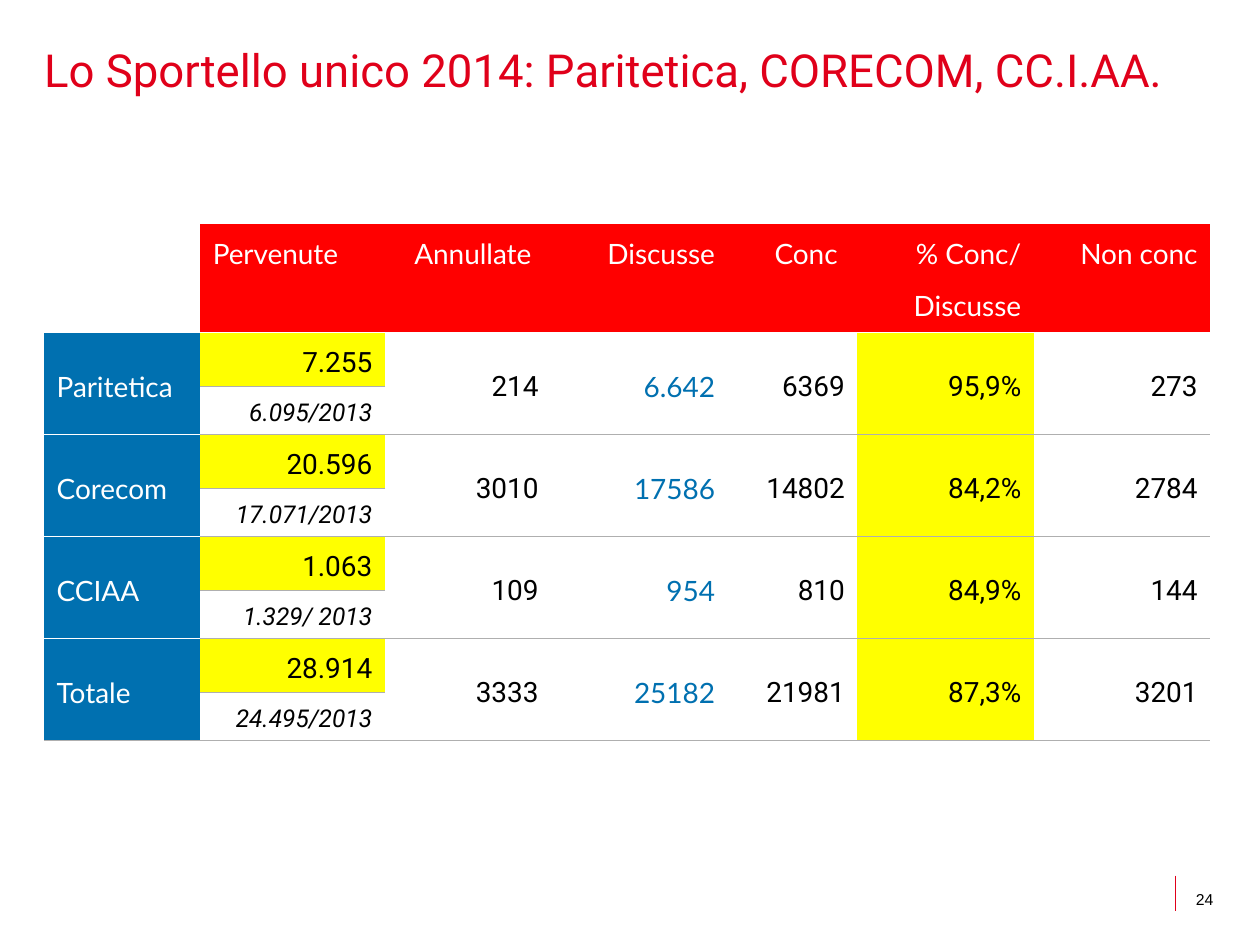
from dataclasses import dataclass

from lxml.etree import SubElement
from pptx import Presentation
from pptx.dml.color import RGBColor
from pptx.enum.text import MSO_ANCHOR, PP_ALIGN
from pptx.oxml.ns import qn
from pptx.util import Pt

RED, HEADER_RED, BLUE, YELLOW = "E0001A", "FF0000", "0070B0", "FFFF00"
WHITE, BLACK, GREY = "FFFFFF", "000000", "AFAFAF"


@dataclass(frozen=True)
class Style:
    font: str
    color: str
    size: float = 16
    italic: bool = False
    align: PP_ALIGN = PP_ALIGN.RIGHT
    fill: str | None = None
    anchor: MSO_ANCHOR = MSO_ANCHOR.MIDDLE


@dataclass(frozen=True)
class Channel:
    name: str
    received: str
    received_2013: str
    results: tuple[str, ...]


FIRST_HEADER = Style("Lato", WHITE, align=PP_ALIGN.LEFT, fill=HEADER_RED, anchor=MSO_ANCHOR.TOP)
HEADER = Style("Lato", WHITE, fill=HEADER_RED, anchor=MSO_ANCHOR.TOP)
LABEL = Style("Lato", WHITE, align=PP_ALIGN.LEFT, fill=BLUE)
NUMBER = Style("Roboto", BLACK)
MARKED = Style("Roboto", BLACK, fill=YELLOW)
DISCUSSED = Style("Lato", BLUE)
PREVIOUS = Style("Roboto", BLACK, size=14, italic=True)
RESULT_STYLES = (NUMBER, DISCUSSED, NUMBER, MARKED, NUMBER)

HEADERS = ("Pervenute", "Annullate ", "Discusse", "Conc ", "% Conc/\nDiscusse", "Non conc")
CHANNELS = (
    Channel("Paritetica", "7.255", " 6.095/2013", ("214", "6.642", "6369", "95,9%", "273")),
    Channel("Corecom", "20.596", "17.071/2013", ("3010", "17586", "14802", "84,2%", "2784")),
    Channel("CCIAA", "1.063", "1.329/ 2013", ("109", "954", "810", "84,9%", "144")),
    Channel("Totale", "28.914", "24.495/2013", ("3333", "25182", "21981", "87,3%", "3201")),
)
COLUMN_WIDTHS = (89.2, 105.6, 95, 100.8, 74.2, 100.8, 100.8)
ROW_HEIGHTS = (61.9,) + (30.9, 27.4) * len(CHANNELS)


def rgb(color: str) -> RGBColor:
    return RGBColor.from_string(color)


def add_run(p, text: str, font: str, size: float, color: str, italic: bool = False) -> None:
    r = p.add_run()
    r.text = text
    r.font.name, r.font.size, r.font.italic = font, Pt(size), italic
    r.font.color.rgb = rgb(color)


def set_margins(tf, side: float = 0) -> None:
    tf.margin_left = tf.margin_right = Pt(side)
    tf.margin_top = tf.margin_bottom = Pt(0)


def format_cell(cell, fill: str | None, top: str, bottom: str) -> None:
    """Set the horizontal borders, clear the vertical ones, then fill."""
    tc_pr = cell._tc.get_or_add_tcPr()
    for tag, color in (("lnL", None), ("lnR", None), ("lnT", top), ("lnB", bottom)):
        ln = SubElement(tc_pr, qn(f"a:{tag}"), w=str(Pt(1) if color else 0))
        if color:
            SubElement(SubElement(ln, qn("a:solidFill")), qn("a:srgbClr"), val=color)
        else:
            SubElement(ln, qn("a:noFill"))
    if fill:
        cell.fill.solid()
        cell.fill.fore_color.rgb = rgb(fill)
    else:
        cell.fill.background()


def write_cell(cell, text: str, style: Style) -> None:
    cell.vertical_anchor = style.anchor
    cell.margin_left = cell.margin_right = Pt(7.2)
    cell.margin_top = cell.margin_bottom = Pt(3.6)
    tf = cell.text_frame
    for i, line in enumerate(text.split("\n")):
        p = tf.add_paragraph() if i else tf.paragraphs[0]
        p.alignment = style.align
        p.line_spacing = 1.2
        p.space_after = Pt(0.4 * style.size)
        add_run(p, line, style.font, style.size, style.color, style.italic)


def add_tall_cell(table, row: int, col: int, text: str, style: Style, top: str, bottom: str) -> None:
    """Write a cell that spans the two rows of a channel."""
    for r in (row, row + 1):
        format_cell(table.cell(r, col), style.fill, top, bottom)
    table.cell(row, col).merge(table.cell(row + 1, col))
    write_cell(table.cell(row, col), text, style)


def add_channel(table, index: int, channel: Channel) -> None:
    row = 1 + 2 * index
    top = GREY if index else WHITE
    label_bottom = GREY if index == len(CHANNELS) - 1 else WHITE
    add_tall_cell(table, row, 0, channel.name, LABEL, WHITE, label_bottom)
    received = ((channel.received, MARKED, top), (channel.received_2013, PREVIOUS, GREY))
    for r, (text, style, edge) in enumerate(received, row):
        format_cell(table.cell(r, 1), style.fill, edge, GREY)
        write_cell(table.cell(r, 1), text, style)
    for col, (text, style) in enumerate(zip(channel.results, RESULT_STYLES), 2):
        add_tall_cell(table, row, col, text, style, top, GREY)


def add_title(s, text: str) -> None:
    title = s.shapes.title
    title.left, title.top, title.width, title.height = Pt(25.2), Pt(28), Pt(663), Pt(28)
    tf = title.text_frame
    tf.word_wrap = True
    tf.vertical_anchor = MSO_ANCHOR.TOP
    set_margins(tf)
    p = tf.paragraphs[0]
    p.alignment = PP_ALIGN.LEFT
    p.line_spacing = Pt(27)
    add_run(p, text, "Roboto", 26, RED)


def add_results_table(s) -> None:
    frame = s.shapes.add_table(len(ROW_HEIGHTS), len(COLUMN_WIDTHS), Pt(25.2), Pt(128.2),
                               Pt(sum(COLUMN_WIDTHS)), Pt(sum(ROW_HEIGHTS)))
    table = frame.table
    table.first_row = table.horz_banding = False
    for column, width in zip(table.columns, COLUMN_WIDTHS):
        column.width = Pt(width)
    for row, height in zip(table.rows, ROW_HEIGHTS):
        row.height = Pt(height)
    format_cell(table.cell(0, 0), WHITE, WHITE, WHITE)
    for col, text in enumerate(HEADERS, 1):
        format_cell(table.cell(0, col), HEADER_RED, HEADER_RED, WHITE)
        write_cell(table.cell(0, col), text, FIRST_HEADER if col == 1 else HEADER)
    for index, channel in enumerate(CHANNELS):
        add_channel(table, index, channel)


def add_page_number(s, number: str) -> None:
    line = s.shapes.add_connector(1, Pt(671.8), Pt(500.4), Pt(671.8), Pt(520.6))
    line.line.color.rgb = rgb(RED)
    line.line.width = Pt(0.5)
    SubElement(line._element.spPr, qn("a:effectLst"))
    sp = s.shapes.add_textbox(Pt(667.4), Pt(508.3), Pt(33.1), Pt(10.8))
    tf = sp.text_frame
    tf.word_wrap = True
    set_margins(tf, 7.2)
    p = tf.paragraphs[0]
    p.alignment = PP_ALIGN.RIGHT
    add_run(p, number, "Arial", 9, BLACK)


def main() -> None:
    prs = Presentation()
    prs.slide_width, prs.slide_height = Pt(720), Pt(540)
    s = prs.slides.add_slide(prs.slide_layouts[5])
    add_title(s, "Lo Sportello unico 2014: Paritetica, CORECOM, CC.I.AA.")
    add_results_table(s)
    add_page_number(s, "24")
    prs.save("out.pptx")


if __name__ == "__main__":
    main()
